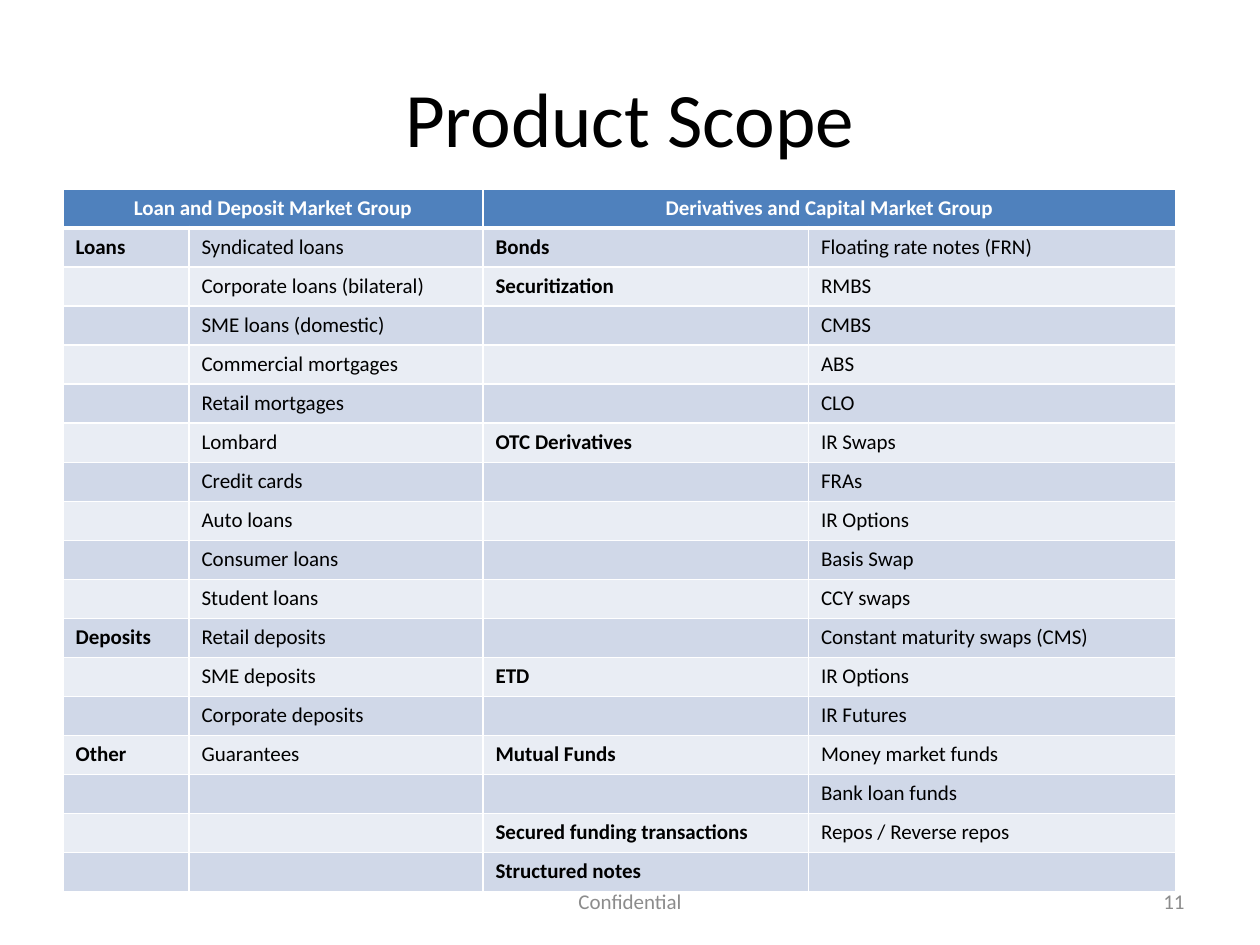
from dataclasses import dataclass
from itertools import zip_longest

import pptx
import pptx.dml.color
import pptx.enum.text
import pptx.oxml
import pptx.oxml.ns
import pptx.util
from lxml import etree

Pt = pptx.util.Pt
RGB = pptx.dml.color.RGBColor.from_string
ALIGN = pptx.enum.text.PP_ALIGN
MIDDLE = pptx.enum.text.MSO_ANCHOR.MIDDLE
qn = pptx.oxml.ns.qn


@dataclass(frozen=True)
class Theme:
    font: str = "Calibri"
    title_size: int = 44
    text_size: int = 12
    ink: str = "000000"
    paper: str = "FFFFFF"
    muted: str = "8C8C8C"
    header: str = "4F81BD"
    bands: tuple = ("D0D8E8", "E9EDF4")
    rule: int = 1
    header_rule: int = 3


THEME = Theme()

MARKET_GROUPS = {
    "Loan and Deposit Market Group": [
        ("Loans", ["Syndicated loans", "Corporate loans (bilateral)",
                   "SME loans (domestic)", "Commercial mortgages",
                   "Retail mortgages", "Lombard", "Credit cards",
                   "Auto loans", "Consumer loans", "Student loans"]),
        ("Deposits", ["Retail deposits", "SME deposits", "Corporate deposits"]),
        ("Other", ["Guarantees"]),
    ],
    "Derivatives and Capital Market Group": [
        ("Bonds", ["Floating rate notes (FRN)"]),
        ("Securitization", ["RMBS", "CMBS", "ABS", "CLO"]),
        ("OTC Derivatives", ["IR Swaps", "FRAs", "IR Options", "Basis Swap",
                             "CCY swaps", "Constant maturity swaps (CMS)"]),
        ("ETD", ["IR Options", "IR Futures"]),
        ("Mutual Funds", ["Money market funds", "Bank loan funds"]),
        ("Secured funding transactions", ["Repos / Reverse repos"]),
        ("Structured notes", [""]),
    ],
}


def write(frame, text, size, color, bold=False, align=ALIGN.LEFT):
    paragraph = frame.paragraphs[0]
    paragraph.alignment = align
    if not text:
        # An empty cell keeps the row height only if its end mark is small too.
        end_mark = etree.SubElement(paragraph._p, qn("a:endParaRPr"))
        end_mark.set("sz", str(size * 100))
        return
    run = paragraph.add_run()
    run.text = text
    run.font.name = THEME.font
    run.font.size = Pt(size)
    run.font.bold = bold
    run.font.color.rgb = RGB(color)


def place(shape, box):
    shape.left, shape.top, shape.width, shape.height = map(Pt, box)


def add_title(slide, box, text):
    title = slide.shapes.title
    place(title, box)
    title.text_frame.vertical_anchor = MIDDLE
    write(title.text_frame, text, THEME.title_size, THEME.ink, align=ALIGN.CENTER)


def paint_cell(cell, fill, top, bottom):
    """Give a cell its fill and white borders of the given top and bottom widths."""
    properties = cell._tc.get_or_add_tcPr()
    widths = {"lnL": THEME.rule, "lnR": THEME.rule, "lnT": top, "lnB": bottom}
    for side, width in widths.items():
        line = etree.SubElement(properties, qn(f"a:{side}"), w=str(Pt(width)))
        solid = etree.SubElement(line, qn("a:solidFill"))
        etree.SubElement(solid, qn("a:srgbClr"), val=THEME.paper)
    cell.fill.solid()
    cell.fill.fore_color.rgb = RGB(fill)


def product_rows(categories):
    """Pair every product with its category, named on the first product only."""
    return [(category if i == 0 else "", product)
            for category, products in categories
            for i, product in enumerate(products)]


def add_scope_table(slide, box, column_shares):
    left, top, width, height = box
    columns = [product_rows(group) for group in MARKET_GROUPS.values()]
    body = [sum(pairs, ()) for pairs in zip_longest(*columns, fillvalue=("", ""))]
    row_count = len(body) + 1
    table = slide.shapes.add_table(
        row_count, len(column_shares), *map(Pt, box)).table
    for column, share in zip(table.columns, column_shares):
        column.width = Pt(width * share / sum(column_shares))
    for row in table.rows:
        row.height = Pt(height / row_count)

    for column in range(len(column_shares)):
        paint_cell(table.cell(0, column), THEME.header, THEME.rule, THEME.header_rule)
    for i, group in enumerate(MARKET_GROUPS):
        heading = table.cell(0, 2 * i)
        heading.merge(table.cell(0, 2 * i + 1))
        write(heading.text_frame, group, THEME.text_size, THEME.paper, True, ALIGN.CENTER)

    for r, texts in enumerate(body, start=1):
        top_rule = THEME.header_rule if r == 1 else THEME.rule
        for c, text in enumerate(texts):
            cell = table.cell(r, c)
            paint_cell(cell, THEME.bands[(r - 1) % 2], top_rule, THEME.rule)
            write(cell.text_frame, text, THEME.text_size, THEME.ink, bold=c % 2 == 0)


def add_footer(slide, box, text, align):
    frame = slide.shapes.add_textbox(*map(Pt, box)).text_frame
    frame.word_wrap = True
    frame.vertical_anchor = MIDDLE
    write(frame, text, THEME.text_size, THEME.muted, align=align)


def main():
    deck = pptx.Presentation()
    deck.slide_width, deck.slide_height = Pt(720), Pt(540)
    slide = deck.slides.add_slide(deck.slide_layouts[5])
    add_title(slide, (36, 21.6, 648, 90), "Product Scope")
    add_scope_table(slide, (36, 108, 636, 401.76), (72, 168, 186, 210))
    add_footer(slide, (516, 500.5, 168, 28.75), "11", ALIGN.RIGHT)
    add_footer(slide, (246, 500.5, 228, 28.75), "Confidential", ALIGN.CENTER)
    deck.save("out.pptx")


if __name__ == "__main__":
    main()
